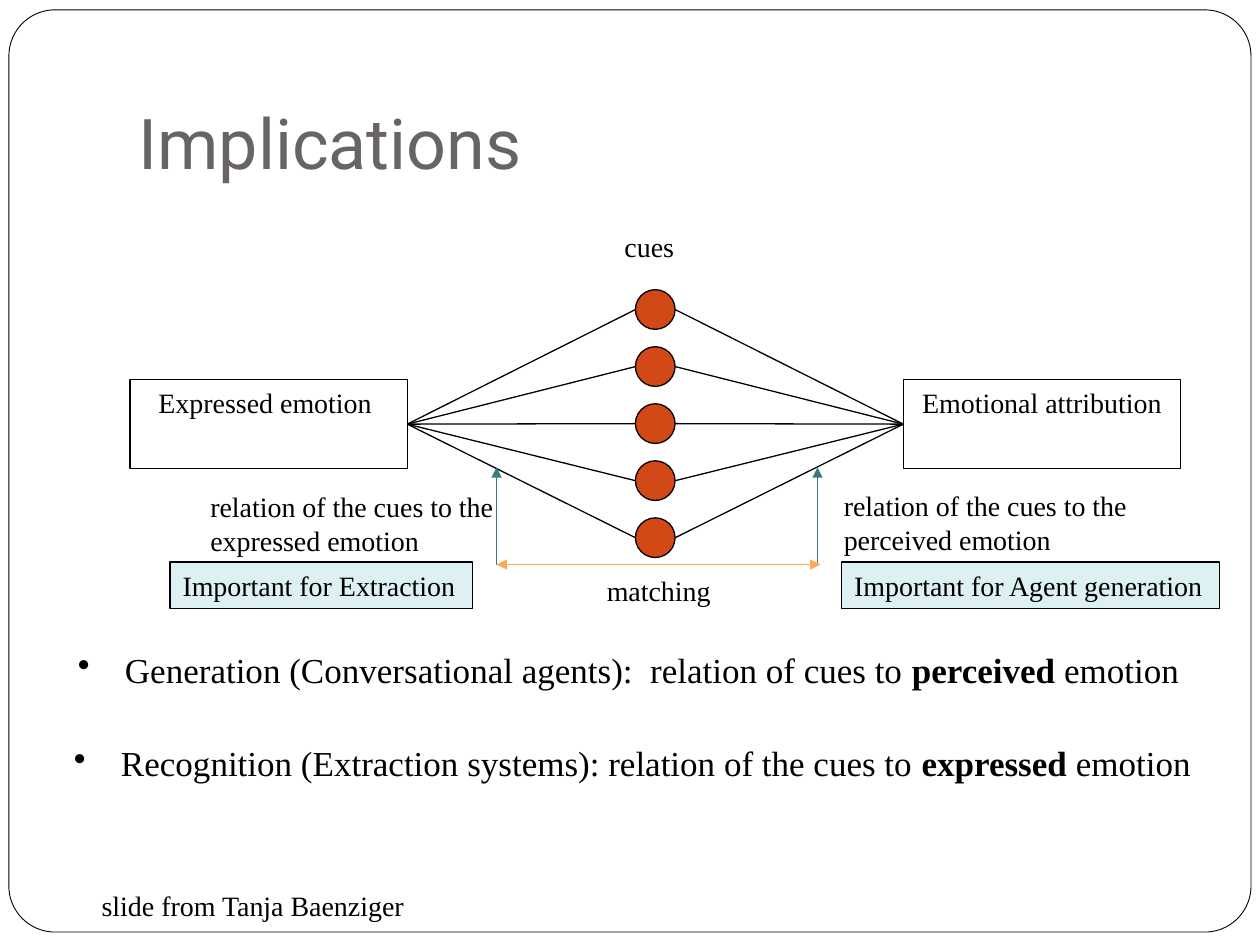
from dataclasses import dataclass

from lxml import etree
from pptx import Presentation
from pptx.dml.color import RGBColor
from pptx.enum.shapes import MSO_CONNECTOR, MSO_SHAPE
from pptx.enum.text import MSO_ANCHOR, PP_ALIGN
from pptx.oxml.ns import qn
from pptx.util import Cm, Pt

LEFT, MID = PP_ALIGN.LEFT, PP_ALIGN.CENTER
TOP, BOTTOM = MSO_ANCHOR.TOP, MSO_ANCHOR.BOTTOM
RECT, ROUND, OVAL = MSO_SHAPE.RECTANGLE, MSO_SHAPE.ROUNDED_RECTANGLE, MSO_SHAPE.OVAL
STRAIGHT = MSO_CONNECTOR.STRAIGHT

HEX = {
    "black": "000000",
    "white": "FFFFFF",
    "title": "696464",
    "dot": "D34817",
    "tag": "DEF1F2",
    "teal": "367D82",
    "amber": "FFA953",
}
SERIF = "Times New Roman"


@dataclass
class Label:
    x: float
    y: float
    w: float
    h: float
    text: str
    align: PP_ALIGN = LEFT
    wrap: bool = True


@dataclass
class Point:
    x: float
    y: float
    w: float
    lead: str
    bold: str
    tail: str


@dataclass
class Arrow:
    x1: float
    y1: float
    x2: float
    y2: float
    hue: str
    ends: tuple


BOX_TOP, BOX_W, BOX_H = 7.65, 5.59, 1.8
BOX_L, BOX_R = 2.62, 18.21
HUB_L, HUB_R, HUB_Y = BOX_L + BOX_W, BOX_R, BOX_TOP + BOX_H / 2
DOT_X, DOT_TOP, DOT_D, DOT_GAP, DOTS = 12.81, 5.84, 0.8, 1.15, 5

BOXES = [
    Label(BOX_L, BOX_TOP, BOX_W, BOX_H, "Expressed emotion ", MID),
    Label(BOX_R, BOX_TOP, BOX_W, BOX_H, "Emotional attribution", MID),
]
TAGS = [
    Label(16.97, 11.33, 7.62, 0.94, "Important for Agent generation", wrap=False),
    Label(3.43, 11.33, 6.1, 0.94, "Important for Extraction", wrap=False),
]
NOTES = [
    Label(12.34, 4.5, 1.85, 1.02, "cues", wrap=False),
    Label(3.99, 9.75, 6.4, 1.63, "relation of the cues to the expressed emotion"),
    Label(16.76, 9.73, 6.4, 1.63, "relation of the cues to the perceived emotion"),
    Label(10.08, 11.43, 6.4, 0.94, "matching", MID),
    Label(1.8, 17.78, 6.68, 0.94, "slide from Tanja Baenziger", wrap=False),
]
ARROWS = [
    Arrow(10.01, 11.38, 10.01, 9.42, "teal", ("tailEnd",)),
    Arrow(16.48, 11.36, 16.48, 9.42, "teal", ("tailEnd",)),
    Arrow(10.01, 11.38, 16.54, 11.38, "amber", ("headEnd", "tailEnd")),
]
POINTS = [
    Point(1.24, 14.83, 23.29, "Recognition (Extraction systems): relation of the cues to ",
          "expressed ", "emotion"),
    Point(1.32, 12.95, 22.86, "Generation (Conversational agents):  relation of cues to ",
          "perceived ", "emotion"),
]


def color(name: str) -> RGBColor:
    return RGBColor.from_string(HEX[name])


def add_run(para, text: str, size: float, bold: bool = False,
            face: str = SERIF, hue: str = "black") -> None:
    run = para.add_run()
    run.text = text
    run.font.size = Pt(size)
    run.font.name = face
    run.font.bold = bold
    run.font.color.rgb = color(hue)


def add_form(slide, kind, x: float, y: float, w: float, h: float,
             fill: str, width: float = 0.75):
    form = slide.shapes.add_shape(kind, Cm(x), Cm(y), Cm(w), Cm(h))
    form.shadow.inherit = False
    form.fill.solid()
    form.fill.fore_color.rgb = color(fill)
    form.line.color.rgb = color("black")
    form.line.width = Pt(width)
    return form


def write(form, label: Label) -> None:
    frame = form.text_frame
    frame.word_wrap = label.wrap
    frame.vertical_anchor = TOP
    para = frame.paragraphs[0]
    para.alignment = label.align
    add_run(para, label.text, 16)


def add_box(slide, label: Label, fill: str) -> None:
    form = add_form(slide, RECT, label.x, label.y, label.w, label.h, fill)
    write(form, label)


def add_note(slide, label: Label) -> None:
    form = slide.shapes.add_textbox(Cm(label.x), Cm(label.y), Cm(label.w), Cm(label.h))
    write(form, label)


def add_line(slide, x1: float, y1: float, x2: float, y2: float,
             hue: str = "black", ends: tuple = ()) -> None:
    line = slide.shapes.add_connector(STRAIGHT, Cm(x1), Cm(y1), Cm(x2), Cm(y2))
    line.line.color.rgb = color(hue)
    line.line.width = Pt(0.75)
    props = line._element.spPr
    stroke = props.find(qn("a:ln"))
    for end in ends:
        etree.SubElement(stroke, qn(f"a:{end}"), type="triangle")
    etree.SubElement(props, qn("a:effectLst"))


def add_point(slide, point: Point) -> None:
    form = slide.shapes.add_textbox(Cm(point.x), Cm(point.y), Cm(point.w), Cm(2.79))
    form.text_frame.word_wrap = True
    para = form.text_frame.paragraphs[0]
    para.space_before = Pt(4)
    props = para._p.get_or_add_pPr()
    props.set("marL", str(Cm(0.95)))
    props.set("indent", str(-Cm(0.95)))
    etree.SubElement(props, qn("a:buChar"), char="•")
    add_run(para, point.lead, 20)
    add_run(para, point.bold, 20, bold=True)
    add_run(para, point.tail, 20)


def add_title(slide, text: str) -> None:
    title = slide.shapes.title
    title.left, title.top, title.width, title.height = Cm(2.54), Cm(0.76), Cm(21.59), Cm(3.18)
    frame = title.text_frame
    frame.word_wrap = True
    frame.vertical_anchor = BOTTOM
    frame.margin_bottom = Cm(0.25)
    para = frame.paragraphs[0]
    para.alignment = LEFT
    add_run(para, text, 40, face="Roboto", hue="title")


def add_fan(slide) -> None:
    for row in range(DOTS):
        top = DOT_TOP + row * DOT_GAP
        mid = top + DOT_D / 2
        add_form(slide, OVAL, DOT_X, top, DOT_D, DOT_D, "dot")
        add_line(slide, HUB_L, HUB_Y, DOT_X, mid)
        add_line(slide, DOT_X + DOT_D, mid, HUB_R, HUB_Y)


def main() -> None:
    deck = Presentation()
    deck.slide_width, deck.slide_height = Cm(25.4), Cm(19.05)
    slide = deck.slides.add_slide(deck.slide_layouts[5])

    border = add_form(slide, ROUND, 0.18, 0.2, 25.04, 18.59, "white", 0.5)
    border.adjustments[0] = 0.05
    slide.shapes._spTree.insert(2, border._element)

    add_title(slide, "Implications")
    for box in BOXES:
        add_box(slide, box, "white")
    add_fan(slide)
    for arrow in ARROWS:
        add_line(slide, arrow.x1, arrow.y1, arrow.x2, arrow.y2, arrow.hue, arrow.ends)
    for note in NOTES:
        add_note(slide, note)
    for point in POINTS:
        add_point(slide, point)
    for tag in TAGS:
        add_box(slide, tag, "tag")

    deck.save("out.pptx")


if __name__ == "__main__":
    main()
